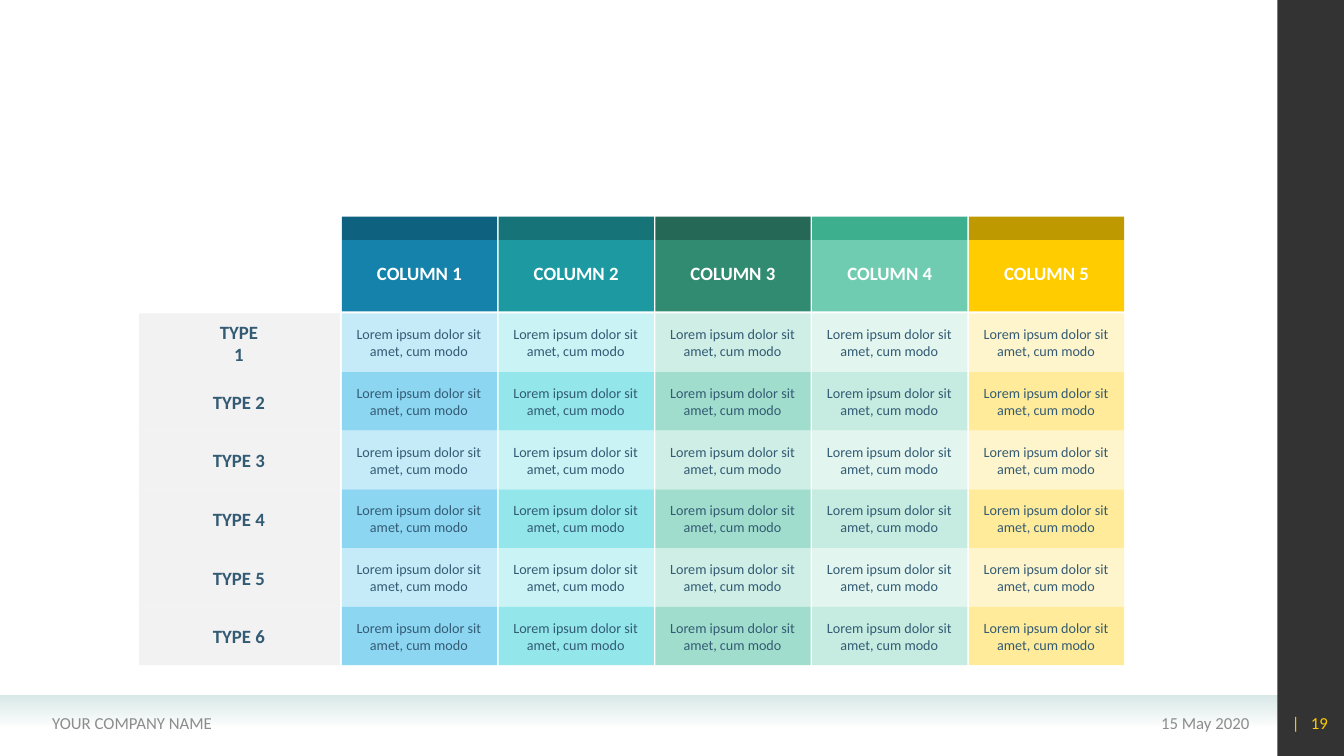
from dataclasses import dataclass

from lxml import etree
from pptx import Presentation
from pptx.dml.color import RGBColor
from pptx.enum import shapes, text
from pptx.oxml import ns
from pptx.util import Inches, Pt


@dataclass(frozen=True)
class Theme:
    font: str = "Calibri"
    head: float = 13.4
    body: float = 10.1
    foot: float = 12
    ink: str = "335B74"
    white: str = "FFFFFF"
    grey: str = "8C8C8C"
    gold: str = "FFCC00"
    label: str = "F2F2F2"
    side: str = "000000"
    band: str = "D9E9E8"
    # One row per column: top strip, header, odd row, even row
    columns: tuple = (
        ("0F6180", "1482AB", "C6EBF8", "8DD6F2"),
        ("167479", "1D9AA1", "C9F3F5", "93E7EB"),
        ("256855", "318B71", "CFEEE5", "A0DDCC"),
        ("3EAF8E", "70CCB1", "E2F5EF", "C6EBE0"),
        ("BF9900", "FFCC00", "FFF5CC", "FFEB99"),
    )


class Deck:
    def __init__(self, theme):
        self.theme = theme
        self.file = Presentation()
        self.file.slide_width = Inches(13.33)
        self.file.slide_height = Inches(7.5)
        self.slide = self.file.slides.add_slide(self.file.slide_layouts[6])

    def rect(self, x, y, w, h, color):
        box = self.slide.shapes.add_shape(
            shapes.MSO_SHAPE.RECTANGLE, Inches(x), Inches(y), Inches(w), Inches(h))
        box.shadow.inherit = False
        box.line.fill.background()
        box.fill.solid()
        box.fill.fore_color.rgb = RGBColor.from_string(color)
        return box

    def fade(self, box, color):
        """Fill the box with a colour that turns clear towards the bottom."""
        box.fill.gradient()
        box.fill.gradient_angle = 270
        for stop, place in zip(box.fill.gradient_stops, (0, 1)):
            stop.color.rgb = RGBColor.from_string(color)
            stop.position = place
        self.alpha(box, 0)

    def alpha(self, box, percent):
        """Set the opacity of the last colour in the box's fill."""
        color = list(box.element.spPr.iter(ns.qn("a:srgbClr")))[-1]
        etree.SubElement(color, ns.qn("a:alpha")).set("val", str(percent * 1000))

    def label(self, words, x, y, w, h, size, color, align="CENTER", bold=False,
              anchor="MIDDLE", wrap=True, tight=False):
        box = self.slide.shapes.add_textbox(Inches(x), Inches(y), Inches(w), Inches(h))
        frame = box.text_frame
        frame.text = words
        frame.word_wrap = wrap
        frame.vertical_anchor = text.MSO_ANCHOR[anchor]
        line = frame.paragraphs[0]
        line.alignment = text.PP_ALIGN[align]
        if tight:
            frame.margin_left = frame.margin_right = Inches(0.04)
            frame.margin_top = frame.margin_bottom = Inches(0.02)
            line.space_before = Pt(2)
        font = line.runs[0].font
        font.name, font.size, font.bold = self.theme.font, Pt(size), bold
        font.color.rgb = RGBColor.from_string(color)

    def frame(self):
        """Draw the footer band, the side bar and the footer texts."""
        t = self.theme
        self.fade(self.rect(0, 6.9, 12.67, 0.31, t.band), t.band)
        self.alpha(self.rect(12.67, 0, 0.66, 7.5, t.side), 80)
        for words, x, w, color, align in (
                ("15 May 2020", 9.1, 3.39, t.grey, "RIGHT"),
                ("YOUR COMPANY NAME", 0.42, 4.9, t.grey, "LEFT"),
                ("|   19", 12.6, 0.67, t.gold, "RIGHT")):
            self.label(words, x, 6.97, w, 0.4, t.foot, color, align)

    def types(self, tops, high):
        t = self.theme
        for top in tops:
            self.rect(1.38, top, 1.99, high, t.label)
        for num, top in enumerate(tops, 1):
            wide = 0.71 if num == 1 else 0.76
            self.label(f"TYPE {num}", 2.37 - wide / 2, top + 0.13, wide, 0.33,
                       t.head, t.ink, bold=True)

    def column(self, num, x, wide, tops, high):
        t = self.theme
        strip, head, *rows = t.columns[num - 1]
        self.rect(x, 2.38, wide, 0.71, head)
        self.label(f"COLUMN {num}", x + (wide - 1.08) / 2, 2.54, 1.08, 0.33,
                   t.head, t.white, bold=True, anchor="BOTTOM", wrap=False)
        self.rect(x, 2.15, wide, 0.23, strip)
        for row, top in enumerate(tops):
            self.rect(x, top, wide, high, rows[row % 2])
            self.label("Lorem ipsum dolor sit amet, cum modo", x + 0.09, top + 0.1,
                       1.35, 0.38, t.body, t.ink, tight=True)


def main():
    deck = Deck(Theme())
    deck.frame()
    high = (6.6 - 3.11) / 6
    tops = [3.11 + row * high for row in range(6)]
    deck.types(tops, high)
    wide, step = 1.54, (9.61 - 3.39) / 4
    for col in range(5):
        deck.column(col + 1, 3.39 + col * step, wide, tops, high)
    deck.file.save("out.pptx")


if __name__ == "__main__":
    main()
